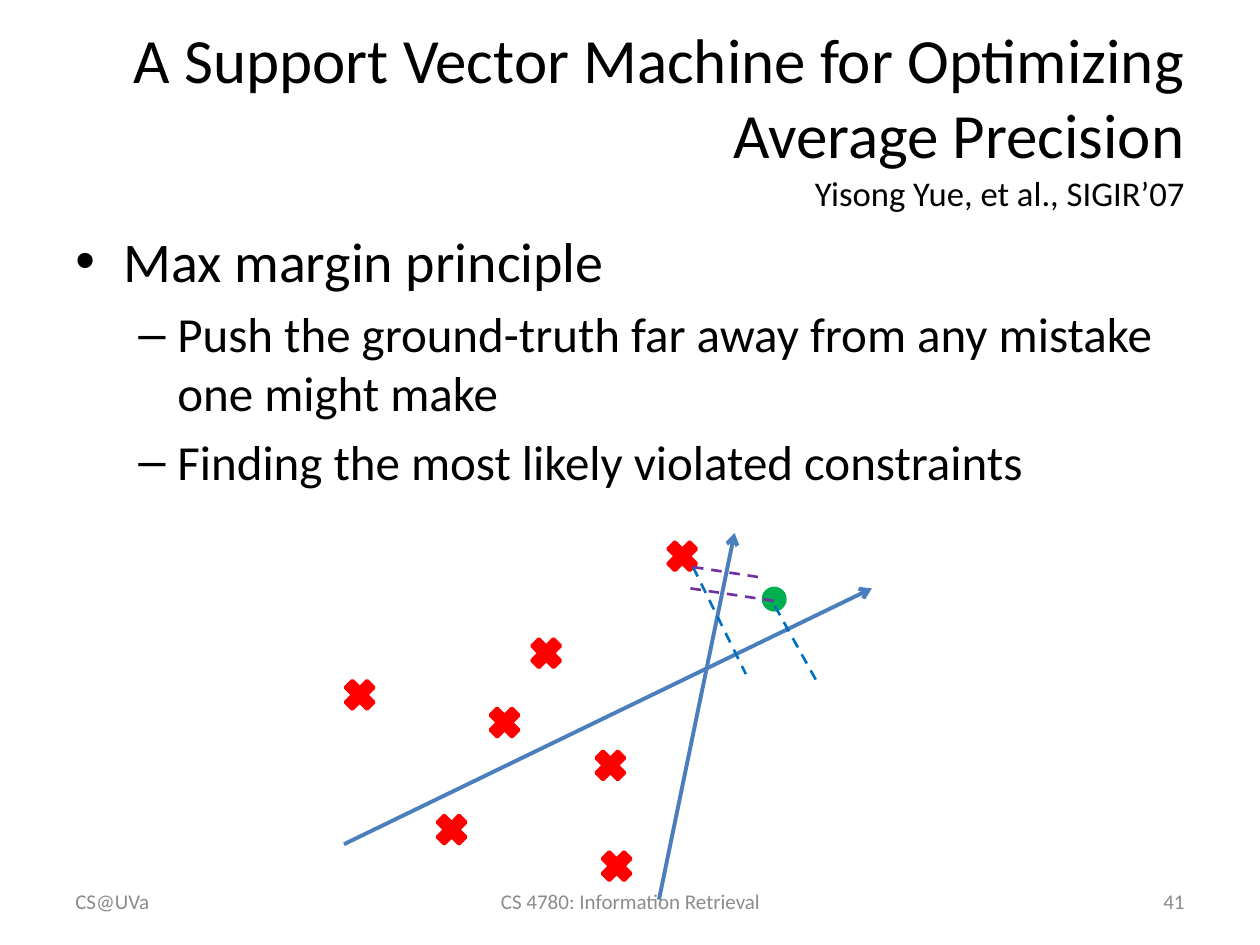
"""Build the slide on a max-margin support vector machine for average precision."""
from lxml.etree import SubElement
from pptx import Presentation
from pptx.dml.color import RGBColor
from pptx.enum.dml import MSO_LINE
from pptx.enum.shapes import MSO_CONNECTOR, MSO_SHAPE
from pptx.enum.text import MSO_ANCHOR, PP_ALIGN
from pptx.oxml.ns import qn
from pptx.util import Inches, Pt

BLACK = RGBColor(0x00, 0x00, 0x00)
GRAY = RGBColor(0x8C, 0x8C, 0x8C)
RED = RGBColor(0xFF, 0x00, 0x00)
GREEN = RGBColor(0x00, 0xB0, 0x50)
STEEL = RGBColor(0x4B, 0x7E, 0xBC)
BLUE = RGBColor(0x00, 0x70, 0xC0)
PURPLE = RGBColor(0x70, 0x30, 0xA0)

deck = Presentation()
deck.slide_width, deck.slide_height = Inches(10), Inches(7.5)
page = deck.slides.add_slide(deck.slide_layouts[6])


def add_box(left, top, width, height, anchor):
    box = page.shapes.add_textbox(Inches(left), Inches(top), Inches(width), Inches(height))
    box.text_frame.word_wrap = True
    box.text_frame.vertical_anchor = anchor
    return box.text_frame


def add_span(para, text, size, color):
    span = para.add_run()
    span.text = text
    span.font.name = "Calibri"
    span.font.size = Pt(size)
    span.font.color.rgb = color


body = add_box(0.5, 1.75, 9, 4.95, MSO_ANCHOR.TOP)
bullets = [
    (0, "Max margin principle"),
    (1, "Push the ground-truth far away from any mistake one might make"),
    (1, "Finding the most likely violated constraints"),
]
levels = [("•", 32, 0.38, 0.38), ("–", 28, 0.81, 0.31)]
for index, (level, text) in enumerate(bullets):
    mark, size, margin, hang = levels[level]
    para = body.add_paragraph() if index else body.paragraphs[0]
    para.level = level
    para.space_before = Pt(size * 0.2)
    properties = para._p.get_or_add_pPr()
    properties.set("marL", str(Inches(margin)))
    properties.set("indent", str(-Inches(hang)))
    SubElement(properties, qn("a:buFont")).set("typeface", "Arial")
    SubElement(properties, qn("a:buChar")).set("char", mark)
    add_span(para, text, size, BLACK)

title = add_box(0.5, 0.3, 9, 1.25, MSO_ANCHOR.MIDDLE).paragraphs[0]
title.alignment = PP_ALIGN.RIGHT
add_span(title, "A Support Vector Machine for Optimizing Average Precision", 36, BLACK)
title.add_line_break()
add_span(title, "Yisong Yue, et al., SIGIR’07", 19.8, BLACK)

mistakes = [(4.17, 5.02), (4.68, 5.91), (3.84, 5.57), (3.42, 6.42),
            (2.69, 5.35), (4.73, 6.71), (5.25, 4.25)]
points = [(MSO_SHAPE.MATH_MULTIPLY, left, top, 0.33, RED) for left, top in mistakes]
points.append((MSO_SHAPE.OVAL, 6.06, 4.67, 0.17, GREEN))
for kind, left, top, size, color in points:
    point = page.shapes.add_shape(kind, Inches(left), Inches(top), Inches(size), Inches(size))
    point.shadow.inherit = False
    point.fill.solid()
    point.fill.fore_color.rgb = color
    point.line.color.rgb = color
    point.line.width = Pt(2)

lines = [
    (5.23, 7.14, 5.83, 4.23, STEEL, True),
    (2.73, 6.7, 6.92, 4.67, STEEL, True),
    (5.5, 4.5, 5.92, 5.35, BLUE, False),
    (6.15, 4.81, 6.5, 5.44, BLUE, False),
    (5.5, 4.5, 6.02, 4.58, PURPLE, False),
    (5.48, 4.67, 6.15, 4.77, PURPLE, False),
]
for *ends, color, is_axis in lines:
    line = page.shapes.add_connector(MSO_CONNECTOR.STRAIGHT, *map(Inches, ends))
    line.line.color.rgb = color
    line.line.width = Pt(2.25 if is_axis else 1.5)
    if is_axis:
        SubElement(line.line._get_or_add_ln(), qn("a:tailEnd")).set("type", "arrow")
    else:
        line.line.dash_style = MSO_LINE.DASH
    SubElement(line._element.spPr, qn("a:effectLst"))

footers = [
    (3.42, 3.17, "CS 4780: Information Retrieval", PP_ALIGN.CENTER),
    (7.17, 2.33, "41", PP_ALIGN.RIGHT),
    (0.5, 2.33, "CS@UVa", PP_ALIGN.LEFT),
]
for left, width, text, alignment in footers:
    para = add_box(left, 6.95, width, 0.4, MSO_ANCHOR.MIDDLE).paragraphs[0]
    para.alignment = alignment
    add_span(para, text, 12, GRAY)

deck.save("out.pptx")
